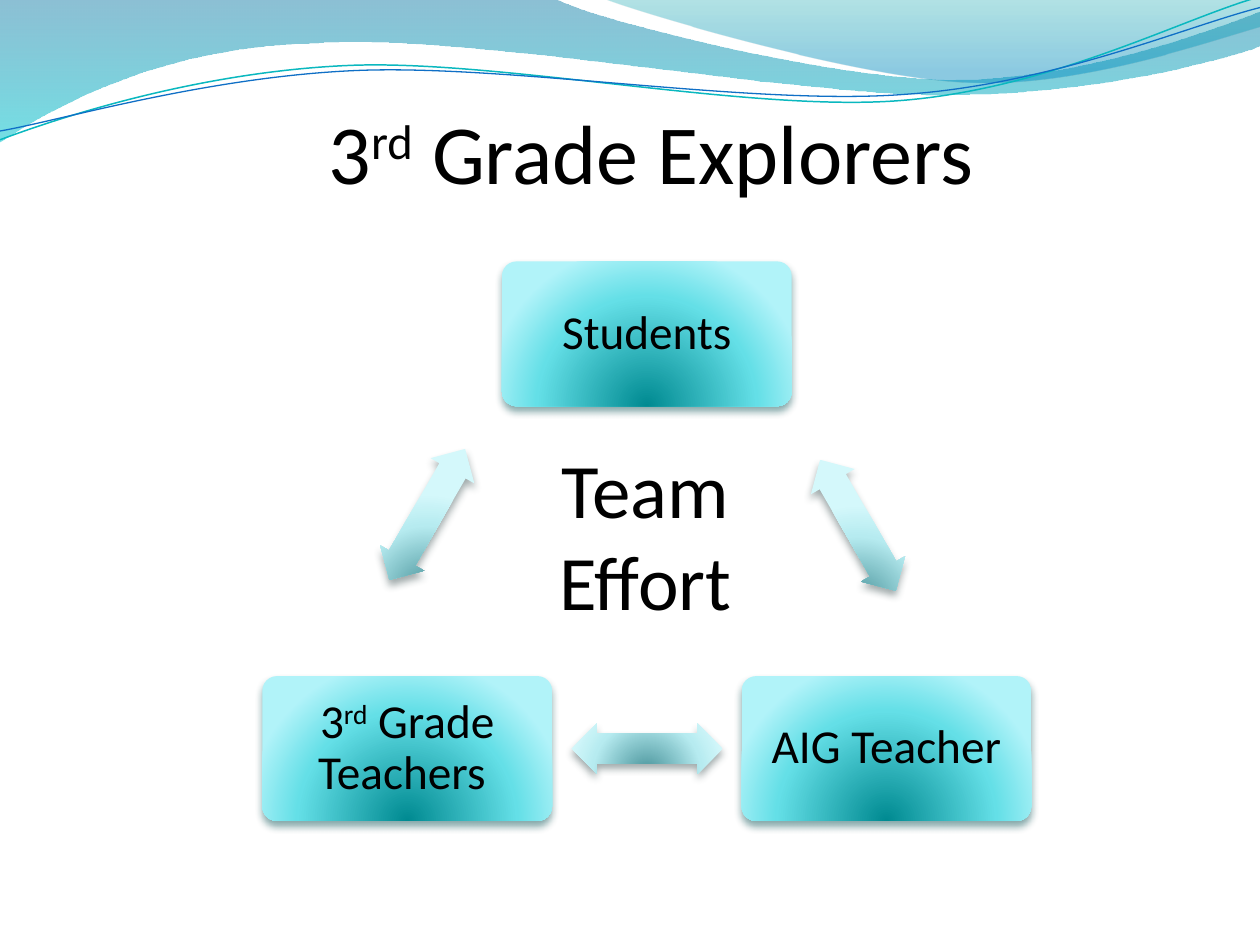
from dataclasses import dataclass

from lxml.etree import SubElement
from pptx import Presentation
from pptx.dml.color import RGBColor
from pptx.enum.shapes import MSO_SHAPE
from pptx.enum.text import MSO_ANCHOR, PP_ALIGN
from pptx.oxml import parse_xml
from pptx.oxml.ns import nsdecls, qn
from pptx.util import Cm, Pt


@dataclass(frozen=True)
class Theme:
    font: str = "Calibri"
    text: str = "000000"
    title_size: int = 48
    center_size: int = 44
    box_size: int = 27
    # Gradient stops: position, colour, opacity (all but colour in percent)
    back_wave: tuple = ((0, "0074A1", 45), (100, "00C6CF", 55))
    front_wave: tuple = ((0, "00A1A9", 30), (80, "008BBF", 45))
    box: tuple = ((0, "008A91", 100), (68, "64DFE7", 100), (100, "B1F3F9", 100))
    arrow: tuple = ((0, "469299", 100), (68, "B6EBF0", 100), (100, "D4F8FB", 100))
    box_shadow: str = "024B4E"
    arrow_shadow: str = "3C5152"
    teal_line: str = "0AB8BF"
    blue_line: str = "0F6FC6"


theme = Theme()


def paint(shape, stops, shadow=None):
    """Fill with a gradient: linear for a flat shape, radial for one with a shadow."""
    if shadow:
        direction = ('<a:path path="circle"><a:fillToRect l="50000" t="130000" '
                     'r="50000" b="-30000"/></a:path>')
    else:
        direction = '<a:lin ang="5400000" scaled="1"/>'
    stop_list = "".join(
        f'<a:gs pos="{position * 1000}"><a:srgbClr val="{color}">'
        f'<a:alpha val="{opacity * 1000}"/></a:srgbClr></a:gs>'
        for position, color, opacity in stops)
    gradient = parse_xml(f'<a:gradFill {nsdecls("a")} rotWithShape="1">'
                         f'<a:gsLst>{stop_list}</a:gsLst>{direction}</a:gradFill>')
    shape.line.fill.background()
    shape.shadow.inherit = False
    shape.fill.background()
    properties = shape.element.spPr
    properties.replace(properties.find(qn("a:noFill")), gradient)
    if shadow:
        outer = SubElement(properties.find(qn("a:effectLst")), qn("a:outerShdw"),
                           blurRad=str(Pt(4.5)), dist=str(Pt(3)), dir="5400000",
                           algn="ctr", rotWithShape="0")
        color = SubElement(outer, qn("a:srgbClr"), val=shadow)
        SubElement(color, qn("a:alpha"), val="48000")


def write(shape, text, size, anchor=MSO_ANCHOR.TOP, margins=None, spacing=None):
    """Write centred text; a part between two ^ marks is raised."""
    frame = shape.text_frame
    frame.word_wrap = True
    frame.vertical_anchor = anchor
    if margins:
        (frame.margin_left, frame.margin_top,
         frame.margin_right, frame.margin_bottom) = map(Cm, margins)
    para = frame.paragraphs[0]
    para.alignment = PP_ALIGN.CENTER
    para.line_spacing = spacing
    for index, part in enumerate(text.split("^")):
        span = para.add_run()
        span.text = part
        span.font.name = theme.font
        span.font.size = Pt(size)
        span.font.color.rgb = RGBColor.from_string(theme.text)
        if index % 2:
            span.font._element.set("baseline", "30000")


deck = Presentation()
deck.slide_width, deck.slide_height = Cm(25.4), Cm(19.05)
page = deck.slides.add_slide(deck.slide_layouts[6])
shapes = page.shapes

# Waves: each segment is a line (one point) or a Bezier curve (three points),
# on a grid of 1000 units across the slide.
back_wave = [
    [(0, 0)], [(440, -1)],
    [(476, 17), (664, 63), (758, 63)], [(853, 63), (958, 26), (1000, 9)],
    [(1001, 36)],
    [(983, 44), (870, 76), (746, 75)], [(622, 75), (382, 28), (257, 34)],
    [(129, 36), (46, 83), (-1, 113)],
]
front_wave = [
    [(479, -1)],
    [(509, 11), (682, 62), (769, 65)], [(856, 69), (961, 32), (1000, 21)],
    [(1000, 0)],
]
teal_wave = [
    [(0, 111)],
    [(48, 93), (158, 57), (277, 52)], [(395, 47), (593, 89), (713, 80)],
    [(833, 71), (938, 15), (998, -2)],
]
blue_wave = [
    [(0, 104)],
    [(47, 96), (164, 61), (283, 56)], [(403, 51), (597, 84), (717, 75)],
    [(836, 67), (941, 21), (1000, 6)],
]
for segments, stops, line_color, line_width in (
    (back_wave, theme.back_wave, None, 0),
    (front_wave, theme.front_wave, None, 0),
    (teal_wave, None, theme.teal_line, 0.85),
    (blue_wave, None, theme.blue_line, 0.75),
):
    points = sum(segments, [])
    builder = shapes.build_freeform(*points[0], scale=deck.slide_width / 1000)
    builder.add_line_segments(points[1:], close=stops is not None)
    wave = builder.convert_to_shape()

    # Join the three lines of each curved segment into one Bezier curve
    lines = iter(list(wave.element.iter(qn("a:lnTo"))))
    for segment in segments[1:]:
        curve = next(lines)
        if len(segment) == 3:
            curve.tag = qn("a:cubicBezTo")
            for line in (next(lines), next(lines)):
                curve.append(line[0])
                line.getparent().remove(line)

    if stops:
        paint(wave, stops)
    else:
        wave.shadow.inherit = False
        wave.fill.background()
        wave.line.color.rgb = RGBColor.from_string(line_color)
        wave.line.width = Pt(line_width)

# Text in the middle of the cycle
center = shapes.add_textbox(Cm(9.94), Cm(9.52), Cm(6.15), Cm(3.1))
write(center, "Team Effort", theme.center_size, MSO_ANCHOR.BOTTOM, (0, 0.13, 0, 0))

# The three partners and the arrows between them
for text, left, top in (
    ("Students", 10.12, 5.27),
    ("AIG Teacher", 14.95, 13.63),
    ("3^rd^ Grade Teachers ", 5.29, 13.63),
):
    box = shapes.add_shape(MSO_SHAPE.ROUNDED_RECTANGLE, Cm(left), Cm(top), Cm(5.84), Cm(2.92))
    box.adjustments[0] = 0.1
    paint(box, theme.box, theme.box_shadow)
    write(box, text, theme.box_size, MSO_ANCHOR.MIDDLE, [0.28] * 4, 0.9)

for left, top, rotation in ((15.77, 10.08, 60), (11.52, 14.58, 180), (7.09, 9.86, 300)):
    arrow = shapes.add_shape(MSO_SHAPE.LEFT_RIGHT_ARROW, Cm(left), Cm(top), Cm(3.05), Cm(1.02))
    arrow.adjustments[0], arrow.adjustments[1] = 0.6, 0.5
    arrow.rotation = rotation
    paint(arrow, theme.arrow, theme.arrow_shadow)

title = shapes.add_textbox(Cm(5.29), Cm(1.9), Cm(15.67), Cm(2.31))
write(title, "3^rd^ Grade Explorers", theme.title_size)

deck.save("out.pptx")
